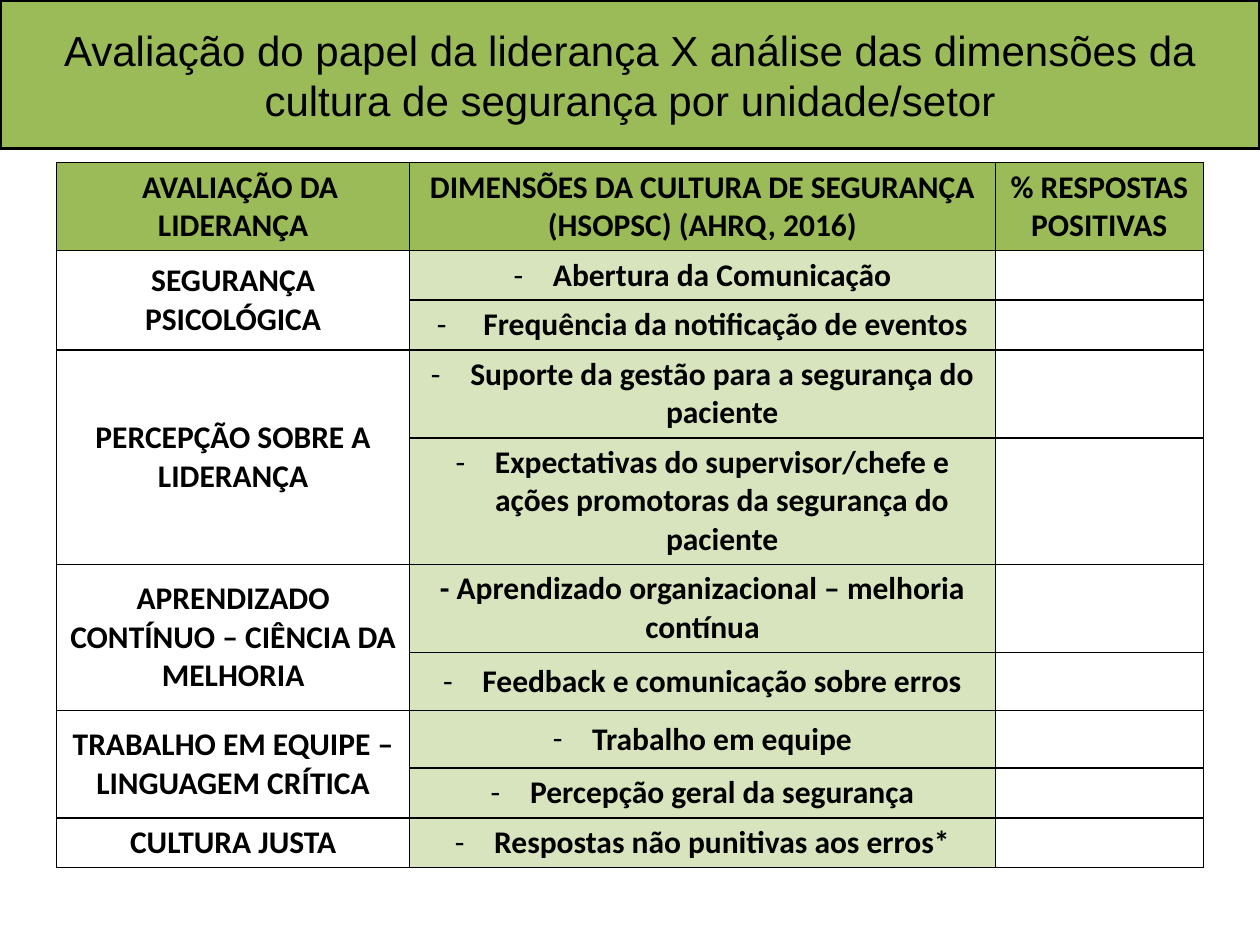
from lxml.etree import Element, SubElement
from pptx import Presentation
from pptx.dml.color import RGBColor
from pptx.enum.shapes import MSO_SHAPE
from pptx.enum.text import MSO_ANCHOR, PP_ALIGN
from pptx.oxml.ns import qn
from pptx.util import Pt

GREEN = "9BBB59"
LIGHT_GREEN = "D7E4BD"
BLACK = "000000"
BULLET_INDENT = 22.5
HEADER_INDENT = 8

TITLE = ("Avaliação do papel da liderança X análise das dimensões da "
         "cultura de segurança por unidade/setor")
HEADERS = ["AVALIAÇÃO DA LIDERANÇA",
           "DIMENSÕES DA CULTURA DE SEGURANÇA (HSOPSC) (AHRQ, 2016)",
           "% RESPOSTAS POSITIVAS"]
GROUPS = [
    ("SEGURANÇA PSICOLÓGICA",
     ["Abertura da Comunicação", " Frequência da notificação de eventos"]),
    ("PERCEPÇÃO SOBRE A LIDERANÇA",
     ["Suporte da gestão para a segurança do paciente",
      "Expectativas do supervisor/chefe e ações promotoras da segurança do paciente"]),
    ("APRENDIZADO CONTÍNUO – CIÊNCIA DA MELHORIA",
     ["- Aprendizado organizacional – melhoria contínua",
      "Feedback e comunicação sobre erros"]),
    ("TRABALHO EM EQUIPE – LINGUAGEM CRÍTICA",
     ["Trabalho em equipe", "Percepção geral da segurança"]),
    ("CULTURA JUSTA", ["Respostas não punitivas aos erros*"]),
]
COLUMN_WIDTHS = [201.6, 334.8, 118.8]
ROW_HEIGHTS = [46.8, 26.6, 26.6, 46.8, 67.7, 46.8, 33.1, 33.1, 16.6, 27.4]


def color(hex_string):
    return RGBColor.from_string(hex_string)


class SlideBuilder:
    title_font, title_size = "Arial", 24
    table_font, table_size = "Calibri", 18

    def __init__(self, slide):
        self.slide = slide

    def add_run(self, paragraph, text, font, size, bold=False):
        paragraph.alignment = PP_ALIGN.CENTER
        run = paragraph.add_run()
        run.text = text
        run.font.name = font
        run.font.size = Pt(size)
        run.font.bold = bold
        run.font.color.rgb = color(BLACK)

    def banner(self, text, left, top, width, height):
        shape = self.slide.shapes.add_shape(
            MSO_SHAPE.RECTANGLE, Pt(left), Pt(top), Pt(width), Pt(height))
        shape.shadow.inherit = False
        shape.fill.solid()
        shape.fill.fore_color.rgb = color(GREEN)
        shape.line.color.rgb = color(BLACK)
        shape.line.width = Pt(2)
        frame = shape.text_frame
        frame.word_wrap = True
        frame.vertical_anchor = MSO_ANCHOR.MIDDLE
        self.add_run(frame.paragraphs[0], text, self.title_font, self.title_size)

    def table(self, left, top, widths, heights):
        shape = self.slide.shapes.add_table(
            len(heights), len(widths), Pt(left), Pt(top), Pt(sum(widths)), Pt(sum(heights)))
        table = shape.table
        table.first_row = False
        table.horz_banding = False
        for column, width in zip(table.columns, widths):
            column.width = Pt(width)
        for row, height in zip(table.rows, heights):
            row.height = Pt(height)
            for cell in row.cells:
                self.style_cell(cell)
        return table

    def style_cell(self, cell):
        cell.margin_left = cell.margin_right = Pt(6.5)
        cell.margin_top = cell.margin_bottom = Pt(3.2)
        cell.vertical_anchor = MSO_ANCHOR.MIDDLE
        cell.fill.background()
        cell.text_frame.paragraphs[0].font.size = Pt(self.table_size)
        properties = cell._tc.get_or_add_tcPr()
        for index, side in enumerate(("a:lnL", "a:lnR", "a:lnT", "a:lnB")):
            border = Element(qn(side), w=str(Pt(1)))
            SubElement(SubElement(border, qn("a:solidFill")), qn("a:srgbClr"), val=BLACK)
            properties.insert(index, border)

    def cell_text(self, cell, text, fill=None, indent=0, bulleted=False):
        if fill:
            cell.fill.solid()
            cell.fill.fore_color.rgb = color(fill)
        paragraph = cell.text_frame.paragraphs[0]
        self.add_run(paragraph, text, self.table_font, self.table_size, True)
        properties = paragraph._p.get_or_add_pPr()
        if bulleted:
            properties.set("marL", str(Pt(BULLET_INDENT)))
            properties.set("indent", str(-Pt(BULLET_INDENT)))
            bullet_font = Element(qn("a:buFont"), typeface=self.table_font)
            bullet = Element(qn("a:buChar"), char="-")
            properties.insert(0, bullet_font)
            properties.insert(1, bullet)
        elif indent:
            properties.set("indent", str(Pt(indent)))


def main():
    presentation = Presentation()
    presentation.slide_width = Pt(720)
    presentation.slide_height = Pt(540)
    builder = SlideBuilder(presentation.slides.add_slide(presentation.slide_layouts[6]))
    builder.banner(TITLE, 0, 0, 720, 85)

    table = builder.table(32.4, 92.9, COLUMN_WIDTHS, ROW_HEIGHTS)
    for column, header in enumerate(HEADERS):
        builder.cell_text(table.cell(0, column), header, GREEN,
                          indent=0 if column else HEADER_INDENT)
    row = 1
    for group, dimensions in GROUPS:
        group_cell = table.cell(row, 0)
        if len(dimensions) > 1:
            group_cell.merge(table.cell(row + len(dimensions) - 1, 0))
        builder.cell_text(group_cell, group)
        for dimension in dimensions:
            builder.cell_text(table.cell(row, 1), dimension, LIGHT_GREEN,
                              bulleted=not dimension.startswith("-"))
            row += 1

    presentation.save("out.pptx")


if __name__ == "__main__":
    main()
